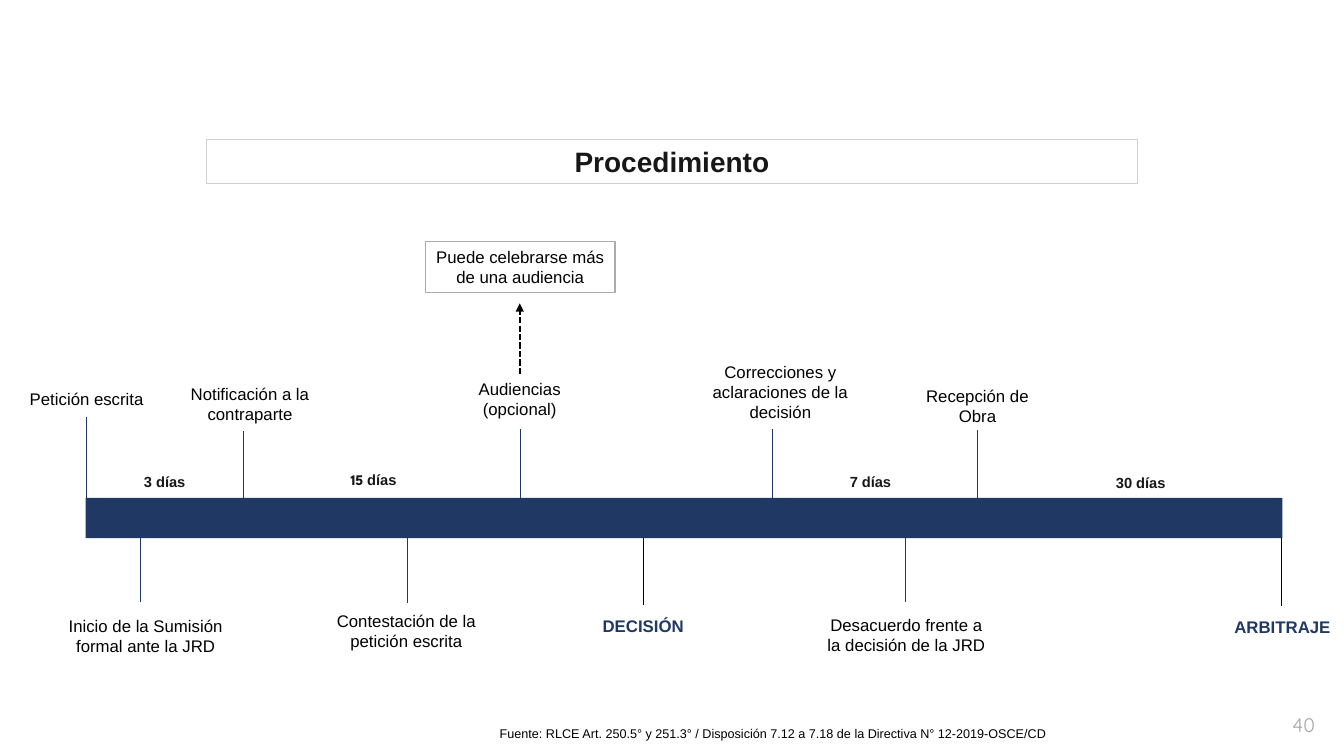
from dataclasses import dataclass

from lxml import etree
from pptx import Presentation
from pptx.dml.color import RGBColor
from pptx.enum.dml import MSO_LINE
from pptx.enum.shapes import MSO_CONNECTOR, MSO_SHAPE
from pptx.enum.text import MSO_ANCHOR, PP_ALIGN
from pptx.oxml.ns import qn
from pptx.shapes.autoshape import Shape
from pptx.shapes.connector import Connector
from pptx.slide import Slide
from pptx.util import Inches, Pt

NAVY = RGBColor(0x20, 0x38, 0x64)
BLACK = RGBColor(0, 0, 0)
INK = RGBColor(0x18, 0x17, 0x17)
GRAY = RGBColor(0xA6, 0xA6, 0xA6)
NOTE_BORDER = RGBColor(0xAF, 0xAB, 0xAB)
TITLE_BORDER = RGBColor(0xD0, 0xCE, 0xCE)

STRAIGHT = MSO_CONNECTOR.STRAIGHT
RECTANGLE = MSO_SHAPE.RECTANGLE
DASH = MSO_LINE.SQUARE_DOT
LEFT, CENTER = PP_ALIGN.LEFT, PP_ALIGN.CENTER
TOP, MIDDLE = MSO_ANCHOR.TOP, MSO_ANCHOR.MIDDLE

BAR_LEFT, BAR_TOP, BAR_WIDTH, BAR_HEIGHT = 0.85, 4.94, 11.87, 0.4
BAR_BOTTOM = BAR_TOP + BAR_HEIGHT


@dataclass(frozen=True)
class Area:
    left: float
    top: float
    width: float
    height: float

    def lengths(self) -> list[Inches]:
        return [Inches(n) for n in (self.left, self.top, self.width, self.height)]


@dataclass(frozen=True)
class Style:
    size: float = 12
    color: RGBColor = BLACK
    bold: bool = False
    font: str = "Arial"
    align: PP_ALIGN = CENTER


@dataclass(frozen=True)
class Milestone:
    text: str
    area: Area
    tick_x: float
    tick_end: float
    key: bool = False


@dataclass(frozen=True)
class Term:
    number: str
    left: float
    top: float
    number_font: str = "Arial"


PLAIN = Style()
KEY = Style(color=NAVY, bold=True)
TERM = Style(10.5, INK, True, align=LEFT)
TITLE = Style(20, INK, True)
SOURCE = Style(9)
PAGE_NUMBER = Style(14, GRAY, font="Quicksand")

AUDIENCIAS = "Audiencias\n(opcional)"
MILESTONES = [
    Milestone("Petición escrita", Area(0.04, 3.81, 1.64, 0.3), 0.85, 4.14),
    Milestone("Inicio de la Sumisión formal ante la JRD", Area(0.45, 6.06, 1.99, 0.5), 1.39, 5.97),
    Milestone("Notificación a la contraparte", Area(1.68, 3.76, 1.6, 0.5), 2.41, 4.28),
    Milestone("Contestación de la petición escrita", Area(3.14, 6.01, 1.78, 0.5), 4.04, 5.98),
    Milestone(AUDIENCIAS, Area(4.47, 3.71, 1.37, 0.5), 5.16, 4.26),
    Milestone("DECISIÓN", Area(5.86, 6.06, 1.04, 0.3), 6.38, 6, True),
    Milestone("Correcciones y aclaraciones de la decisión", Area(6.82, 3.54, 1.84, 0.71), 7.66, 4.26),
    Milestone("Desacuerdo frente a la decisión de la JRD", Area(8.1, 6.05, 1.78, 0.5), 8.98, 5.97),
    Milestone("Recepción de Obra", Area(8.98, 3.78, 1.43, 0.5), 9.69, 4.27),
    Milestone("ARBITRAJE", Area(12.11, 6.07, 1.22, 0.3), 12.71, 6.01, True),
]
TERMS = [
    Term("3", 1.33, 4.64),
    Term("15", 3.38, 4.62, "League Spartan"),
    Term("7", 8.33, 4.64),
    Term("30", 10.97, 4.65),
]


def write(box: Shape, text: str, style: Style, anchor: MSO_ANCHOR = TOP) -> None:
    frame = box.text_frame
    frame.word_wrap = True
    frame.vertical_anchor = anchor
    frame.text = text
    for para in frame.paragraphs:
        para.alignment = style.align
        for span in para.runs:
            span.font.name = style.font
            span.font.size = Pt(style.size)
            span.font.bold = style.bold
            span.font.color.rgb = style.color


def add_label(page: Slide, area: Area, text: str, style: Style) -> Shape:
    box = page.shapes.add_textbox(*area.lengths())
    write(box, text, style)
    return box


def add_frame(page: Slide, area: Area, border: RGBColor, text: str, style: Style) -> None:
    """Add an unfilled, outlined rectangle with centred text."""
    box = page.shapes.add_shape(RECTANGLE, *area.lengths())
    box.shadow.inherit = False
    box.fill.background()
    box.line.color.rgb = border
    box.line.width = Pt(0.75)
    write(box, text, style, MIDDLE)


def add_bar(page: Slide) -> None:
    area = Area(BAR_LEFT, BAR_TOP, BAR_WIDTH, BAR_HEIGHT)
    bar = page.shapes.add_shape(RECTANGLE, *area.lengths())
    bar.shadow.inherit = False
    bar.fill.solid()
    bar.fill.fore_color.rgb = NAVY
    bar.line.fill.background()


def add_vertical(page: Slide, x: float, start: float, end: float,
                 color: RGBColor, width: float) -> Connector:
    line = page.shapes.add_connector(
        STRAIGHT, Inches(x), Inches(start), Inches(x), Inches(end))
    line.line.color.rgb = color
    line.line.width = Pt(width)
    etree.SubElement(line._element.spPr, qn("a:effectLst"))
    return line


def add_milestone(page: Slide, milestone: Milestone) -> Shape:
    edge = BAR_TOP if milestone.tick_end < BAR_TOP else BAR_BOTTOM
    color, width = (BLACK, 1) if milestone.key else (NAVY, 0.25)
    add_vertical(page, milestone.tick_x, edge, milestone.tick_end, color, width)
    return add_label(page, milestone.area, milestone.text, KEY if milestone.key else PLAIN)


def add_term(page: Slide, term: Term) -> None:
    area = Area(term.left, term.top, 0.8, 0.29)
    box = add_label(page, area, f"{term.number} días", TERM)
    if term.number_font != TERM.font:
        para = box.text_frame.paragraphs[0]
        number = para.runs[0]
        number.text = f"{term.number} "
        number.font.name = term.number_font
        unit = para.add_run()
        unit.text = "días"
        unit.font.name = TERM.font
        unit.font.size = Pt(TERM.size)
        unit.font.bold = TERM.bold
        unit.font.color.rgb = TERM.color


def add_hearing_arrow(page: Slide, hearing: Shape) -> None:
    arrow = add_vertical(page, 5.16, 3.71, 3.01, BLACK, 1.5)
    arrow.begin_connect(hearing, 0)
    arrow.end_x = arrow.begin_x
    arrow.line.dash_style = DASH
    etree.SubElement(arrow.line._get_or_add_ln(), qn("a:tailEnd"), type="triangle")


def main() -> None:
    deck = Presentation()
    deck.slide_width, deck.slide_height = Inches(13.33), Inches(7.5)
    page = deck.slides.add_slide(deck.slide_layouts[6])

    add_frame(page, Area(2.05, 1.38, 9.23, 0.44), TITLE_BORDER, "Procedimiento", TITLE)
    add_frame(page, Area(4.22, 2.4, 1.88, 0.5), NOTE_BORDER,
              "Puede celebrarse más de una audiencia", PLAIN)
    add_bar(page)
    for milestone in MILESTONES:
        label = add_milestone(page, milestone)
        if milestone.text == AUDIENCIAS:
            add_hearing_arrow(page, label)
    for term in TERMS:
        add_term(page, term)

    add_label(page, Area(3.08, 7.15, 9.17, 0.3),
              "Fuente: RLCE Art. 250.5° y 251.3° / Disposición 7.12 a 7.18 "
              "de la Directiva N° 12-2019-OSCE/CD", SOURCE)
    add_label(page, Area(12.67, 7.02, 0.52, 0.34), "40", PAGE_NUMBER)
    deck.save("out.pptx")


if __name__ == "__main__":
    main()
